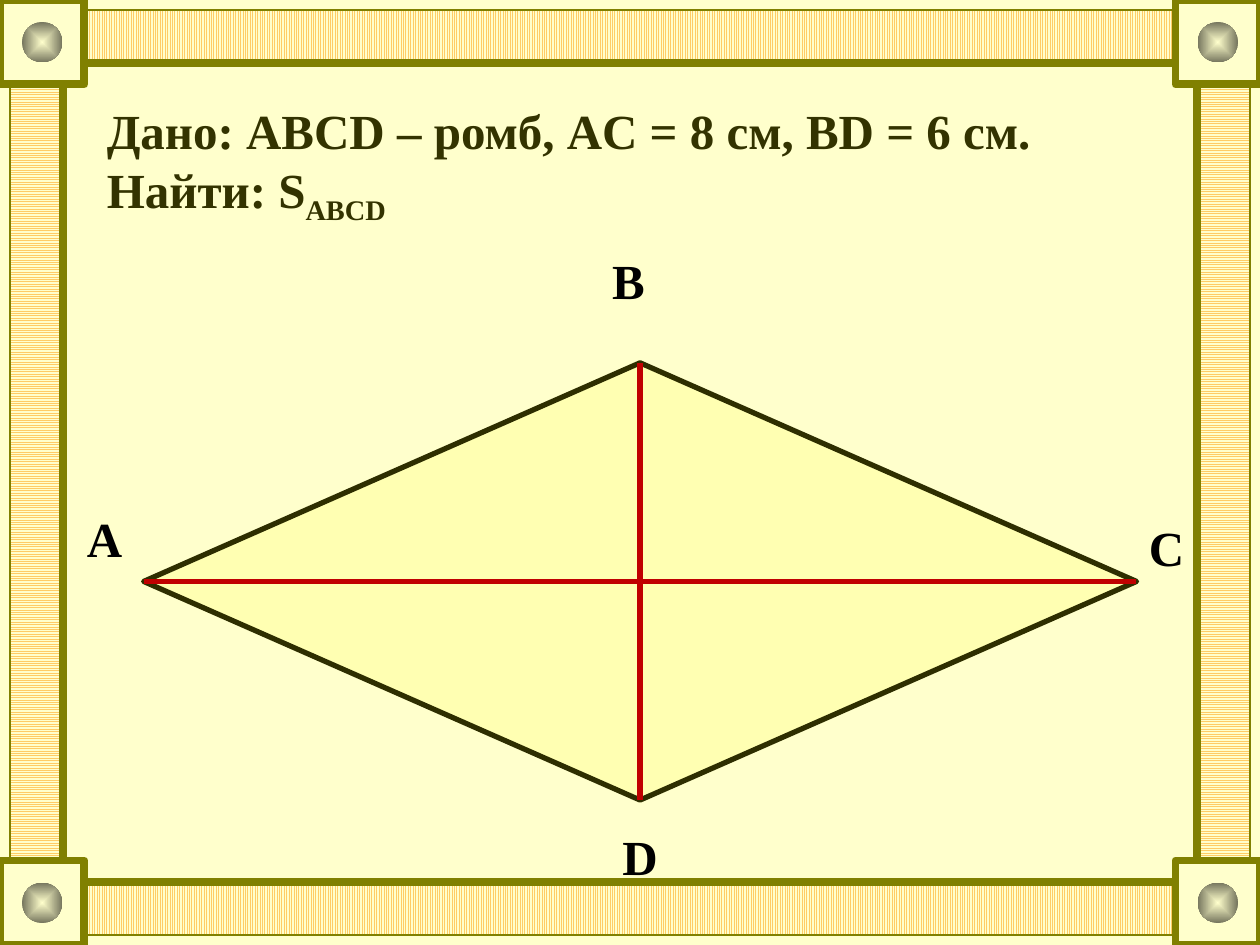
from dataclasses import dataclass
from itertools import product

from lxml import etree
from pptx import Presentation
from pptx import util as u
from pptx.dml.color import RGBColor
from pptx.enum import dml, shapes, text
from pptx.oxml import parse_xml
from pptx.oxml.ns import nsdecls, qn


@dataclass(frozen=True)
class Theme:
    paper: str = "FFFFCC"
    weave: str = "FFCC66"
    frame: str = "808000"
    shade: str = "76765E"
    title: str = "333300"
    label: str = "000000"
    face: str = "FFFFB2"
    edge: str = "2E2E00"
    cross: str = "C00000"
    font: str = "Times New Roman"
    size: int = 28


@dataclass(frozen=True)
class Box:
    x: float
    y: float
    w: float
    h: float

    def emu(self) -> list[int]:
        return [u.Inches(v) for v in (self.x, self.y, self.w, self.h)]


@dataclass(frozen=True)
class Band:
    box: Box
    weave: dml.MSO_PATTERN


@dataclass(frozen=True)
class Mark:
    name: str
    box: Box


THEME = Theme()
KIND = shapes.MSO_SHAPE
WIDE, HIGH = 10, 7.5
EDGE, THICK = 0.08, 0.42      # woven border
INNER = EDGE + THICK
TILE, KNOB = 0.67, 0.32       # corner tiles and their knobs
VERT = dml.MSO_PATTERN.NARROW_VERTICAL
HORZ = dml.MSO_PATTERN.NARROW_HORIZONTAL

BANDS = [
    Band(Box(INNER, EDGE, WIDE - 2 * INNER, THICK), VERT),
    Band(Box(EDGE, INNER, THICK, HIGH - 2 * INNER), HORZ),
    Band(Box(INNER, HIGH - INNER, WIDE - 2 * INNER, THICK), VERT),
    Band(Box(WIDE - INNER, INNER, THICK, HIGH - 2 * INNER), HORZ),
]
MARKS = [
    Mark("B", Box(4.76, 1.94, 0.46, 0.57)),
    Mark("A", Box(0.59, 3.99, 0.49, 0.57)),
    Mark("C", Box(9.02, 4.06, 0.49, 0.57)),
    Mark("D", Box(4.84, 6.51, 0.49, 0.57)),
]


def rgb(tint: str) -> RGBColor:
    return RGBColor.from_string(tint)


def stroke(line, tint: str, width: float) -> None:
    line.color.rgb = rgb(tint)
    line.width = u.Pt(width)


def draw(slide, kind, box: Box, fill: str = "", tint: str = "", width: float = 1):
    shape = slide.shapes.add_shape(kind, *box.emu())
    shape.shadow.inherit = False
    if fill:
        shape.fill.solid()
        shape.fill.fore_color.rgb = rgb(fill)
    else:
        shape.fill.background()
    if tint:
        stroke(shape.line, tint, width)
    else:
        shape.line.fill.background()
    return shape


def weave(slide, band: Band) -> None:
    fill = draw(slide, KIND.RECTANGLE, band.box).fill
    fill.patterned()
    fill.pattern = band.weave
    fill.fore_color.rgb = rgb(THEME.weave)
    fill.back_color.rgb = rgb(THEME.paper)


def corner(slide, x: float, y: float) -> None:
    draw(slide, KIND.RECTANGLE, Box(x, y, TILE, TILE), THEME.paper, THEME.frame, 4.5)
    gap = (TILE - KNOB) / 2
    knob = draw(slide, KIND.OVAL, Box(x + gap, y + gap, KNOB, KNOB))
    knob.fill.gradient()
    for stop, tint in zip(knob.fill.gradient_stops, (THEME.paper, THEME.shade)):
        stop.color.rgb = rgb(tint)
    # The gradient runs outward from the centre
    grad = knob._element.spPr.find(qn("a:gradFill"))
    grad.replace(grad.find(qn("a:lin")), parse_xml(
        f'<a:path {nsdecls("a")} path="shape">'
        '<a:fillToRect l="50000" t="50000" r="50000" b="50000"/></a:path>'))


def write(slide, box: Box, words: str, tint: str, low: str = "", **form) -> None:
    frame = slide.shapes.add_textbox(*box.emu()).text_frame
    for key, value in form.items():
        setattr(frame, key, value)
    para = frame.paragraphs[0]
    para.text = words
    if low:
        run = para.add_run()
        run.text = low
        run.font._element.set("baseline", "-25000")
    look = {"name": THEME.font, "size": u.Pt(THEME.size), "bold": True}
    for run in para.runs:
        for key, value in look.items():
            setattr(run.font, key, value)
        run.font.color.rgb = rgb(tint)


def join(slide, shape, start: int, end: int) -> None:
    line = slide.shapes.add_connector(shapes.MSO_CONNECTOR.STRAIGHT, 0, 0, 0, 0)
    line.begin_connect(shape, start)
    line.end_connect(shape, end)
    stroke(line.line, THEME.cross, 3)
    etree.SubElement(line._element.spPr, qn("a:effectLst"))


def main() -> None:
    deck = Presentation()
    deck.slide_width, deck.slide_height = u.Inches(WIDE), u.Inches(HIGH)
    slide = deck.slides.add_slide(deck.slide_layouts[6])
    slide.background.fill.solid()
    slide.background.fill.fore_color.rgb = rgb(THEME.paper)

    # Border
    for band in BANDS:
        weave(slide, band)
    for inset, width in ((INNER, 4.5), (EDGE, 1)):
        box = Box(inset, inset, WIDE - 2 * inset, HIGH - 2 * inset)
        draw(slide, KIND.RECTANGLE, box, tint=THEME.frame, width=width)
    for x, y in product((0, WIDE - TILE), (0, HIGH - TILE)):
        corner(slide, x, y)

    # Problem statement
    write(slide, Box(0.75, 0.67, 8.5, 1.25),
          "Дано: ABCD – ромб, AC = 8 см, BD = 6 см.\vНайти: S",
          THEME.title, "ABCD", word_wrap=True,
          vertical_anchor=text.MSO_ANCHOR.MIDDLE)

    # Rhombus with its diagonals
    rhomb = draw(slide, KIND.DIAMOND, Box(1.14, 2.88, 7.88, 3.47),
                 THEME.face, THEME.edge, 3)
    for start, end in ((0, 2), (1, 3)):
        join(slide, rhomb, start, end)

    # Vertex names
    for mark in MARKS:
        write(slide, mark.box, mark.name, THEME.label, word_wrap=False,
              auto_size=text.MSO_AUTO_SIZE.SHAPE_TO_FIT_TEXT)

    deck.save("out.pptx")


if __name__ == "__main__":
    main()
